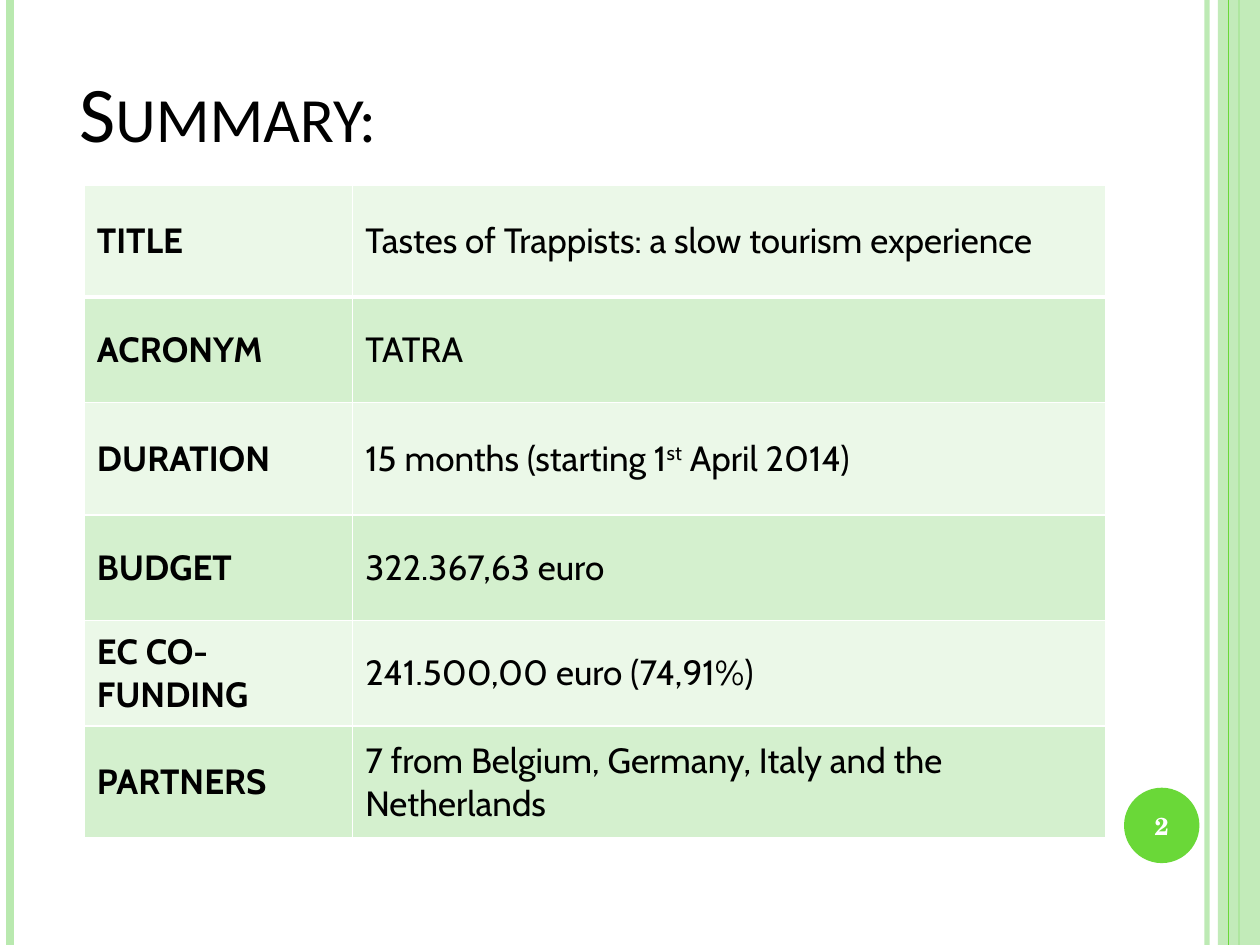
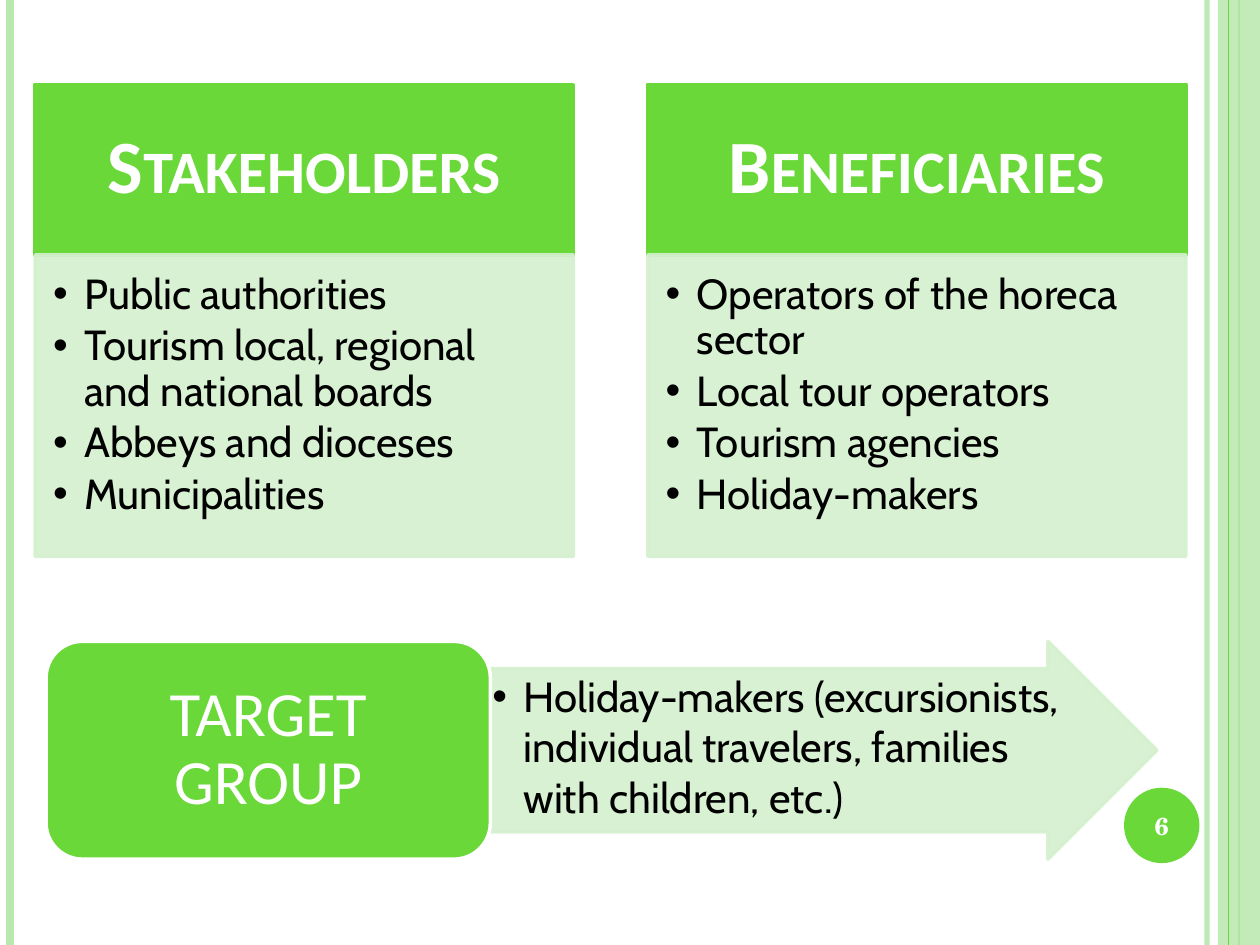
from dataclasses import dataclass

from lxml import etree
from pptx import Presentation
from pptx.dml.color import RGBColor
from pptx.enum.shapes import MSO_CONNECTOR, MSO_SHAPE
from pptx.enum.text import MSO_ANCHOR, PP_ALIGN
from pptx.oxml.ns import qn
from pptx.util import Cm, Pt

RECT, ELLIPSE = MSO_SHAPE.RECTANGLE, MSO_SHAPE.OVAL
ROUNDED, ARROW = MSO_SHAPE.ROUNDED_RECTANGLE, MSO_SHAPE.RIGHT_ARROW
STRAIGHT = MSO_CONNECTOR.STRAIGHT
TOP, MIDDLE, BOTTOM = MSO_ANCHOR.TOP, MSO_ANCHOR.MIDDLE, MSO_ANCHOR.BOTTOM
LEFT, CENTER = PP_ALIGN.LEFT, PP_ALIGN.CENTER


@dataclass(frozen=True)
class Theme:
    green: str = "6AD838"
    band: str = "B9E9AF"
    pale: str = "D4F0CE"
    paler: str = "EBF8E8"
    white: str = "FFFFFF"
    black: str = "000000"
    heading_font: str = "Calibri"
    body_font: str = "Cabin"
    number_font: str = "TeX Gyre Schola"
    title_size: float = 45
    header_size: float = 43
    target_size: float = 36
    list_size: float = 24
    table_size: float = 20
    number_size: float = 14


T = Theme()
WIDTH, HEIGHT = 25.4, 19.05
BODY = dict(font=T.body_font, size=T.list_size, color=T.black)
TITLE = dict(font=T.heading_font, size=T.title_size, color=T.black, cap="small")
HEADER = dict(font=T.heading_font, size=T.header_size, color=T.white, bold=True, cap="small")
TARGET = dict(font=T.heading_font, size=T.target_size, color=T.white)
NUMBER = dict(font=T.number_font, size=T.number_size, color=T.white, bold=True)
CELL = dict(font=T.body_font, size=T.table_size, color=T.black)

SUMMARY = [
    ("TITLE", ["Tastes of Trappists: a slow tourism experience"]),
    ("ACRONYM", ["TATRA"]),
    ("DURATION", ["15 months (starting 1", ("st", 30000), " April 2014)"]),
    ("BUDGET", ["322.367,63 euro"]),
    ("EC CO-FUNDING", ["241.500,00 euro (74,91%)"]),
    ("PARTNERS", ["7 from Belgium, Germany, Italy and the Netherlands"]),
]
GROUPS = [
    ("Stakeholders", ["Public authorities", "Tourism local, regional and national boards",
                      "Abbeys and dioceses", "Municipalities"]),
    ("Beneficiaries", ["Operators of the horeca sector", "Local tour operators",
                       "Tourism agencies", "Holiday-makers"]),
]
TARGET_TEXT = "Holiday-makers (excursionists, individual travelers, families with children, etc.)"


def rgb(color):
    return RGBColor.from_string(color)


def set_alpha(fill, percent):
    color = fill.fore_color._xFill.find(qn("a:srgbClr"))
    etree.SubElement(color, qn("a:alpha"), val=str(percent * 1000))


def paint(fill, color, alpha=100):
    fill.solid()
    fill.fore_color.rgb = rgb(color)
    if alpha < 100:
        set_alpha(fill, alpha)


def add_box(s, kind, box, fill, line=None, line_width=2, alpha=100):
    sp = s.shapes.add_shape(kind, *map(Cm, box))
    sp.shadow.inherit = False
    paint(sp.fill, fill, alpha)
    if line:
        paint(sp.line.fill, line, alpha)
        sp.line.width = Pt(line_width)
    else:
        sp.line.fill.background()
    return sp


def add_run(p, text, font, size, color, bold=False, cap=None, baseline=None):
    r = p.add_run()
    r.text = text
    for name, value in dict(name=font, size=Pt(size), bold=bold).items():
        setattr(r.font, name, value)
    r.font.color.rgb = rgb(color)
    for name, value in dict(cap=cap, baseline=baseline).items():
        if value:
            r.font._element.set(name, str(value))


def add_bullet(p):
    pPr = p._p.get_or_add_pPr()
    pPr.set("marL", str(Cm(0.63)))
    pPr.set("indent", str(-Cm(0.63)))
    etree.SubElement(pPr, qn("a:buFont"), typeface="Arial")
    etree.SubElement(pPr, qn("a:buChar"), char="•")


def write(sp, lines, style, anchor=MIDDLE, align=CENTER, margins=(0, 0, 0, 0),
          spacing=1, after=0, bullets=False):
    """Fill a shape with paragraphs; margins are left, top, right, bottom in cm."""
    tf = sp.text_frame
    tf.word_wrap = True
    tf.vertical_anchor = anchor
    for side, margin in zip(("left", "top", "right", "bottom"), margins):
        setattr(tf, f"margin_{side}", Cm(margin))
    for i, line in enumerate(lines):
        p = tf.add_paragraph() if i else tf.paragraphs[0]
        for name, value in dict(alignment=align, line_spacing=spacing,
                                space_after=Pt(after)).items():
            setattr(p, name, value)
        if bullets:
            add_bullet(p)
        add_run(p, line, **style)


def add_vertical_line(s, x, color, width, alpha=100):
    line = s.shapes.add_connector(STRAIGHT, Cm(x), 0, Cm(x), Cm(HEIGHT))
    paint(line.line.fill, color, alpha)
    line.line.width = Pt(width)
    etree.SubElement(line._element.spPr, qn("a:effectLst"))


def add_frame(s, number):
    """Side bands and the page number disc shared by all slides."""
    add_vertical_line(s, 24.33, T.band, 3, 93)
    add_vertical_line(s, 0.21, T.band, 4.5)
    add_vertical_line(s, 24.98, T.green, 1.5)
    add_box(s, RECT, (24.55, 0, WIDTH - 24.55, HEIGHT), T.band, alpha=87)
    add_vertical_line(s, 24.77, T.green, 0.75)
    disc = add_box(s, ELLIPSE, (22.66, 15.88, 1.52, 1.52), T.green)
    write(disc, [str(number)], NUMBER)


def add_title(s, text, box):
    sp = s.shapes.add_textbox(*map(Cm, box))
    write(sp, [text], TITLE, BOTTOM, LEFT, (0.25, 0.13, 0.25, 0.13))


def add_borders(cell, bottom=1):
    tcPr = cell._tc.get_or_add_tcPr()
    for side, width in dict(L=1, R=1, T=1, B=bottom).items():
        ln = etree.SubElement(tcPr, qn(f"a:ln{side}"), w=str(Pt(width)))
        fill = etree.SubElement(ln, qn("a:solidFill"))
        etree.SubElement(fill, qn("a:srgbClr"), val=T.white)


def add_summary_table(s, left, top, column_widths, row_heights):
    table = s.shapes.add_table(len(SUMMARY), len(column_widths), Cm(left), Cm(top),
                               Cm(sum(column_widths)), Cm(sum(row_heights))).table
    table.first_row = table.horz_banding = False
    for column, width in zip(table.columns, column_widths):
        column.width = Cm(width)
    for i, (label, parts) in enumerate(SUMMARY):
        table.rows[i].height = Cm(row_heights[i])
        for j, content in enumerate(([label], parts)):
            cell = table.cell(i, j)
            cell.vertical_anchor = MIDDLE
            add_borders(cell, bottom=1 if i else 3)
            paint(cell.fill, T.pale if i % 2 else T.paler)
            for part in content:
                text, baseline = part if isinstance(part, tuple) else (part, None)
                add_run(cell.text_frame.paragraphs[0], text, **CELL,
                        bold=j == 0, baseline=baseline)


def add_group_panel(s, heading, items, box):
    left, top, width, height = box
    header_height = 3.44
    header = add_box(s, RECT, (left, top, width, header_height), T.green, T.green)
    write(header, [heading], HEADER, margins=(0.84, 0.48, 0.84, 0.48), spacing=0.9)
    body = add_box(s, RECT, (left, top + header_height, width, height - header_height),
                   T.pale, T.pale, alpha=90)
    write(body, items, BODY, TOP, LEFT, (0.36, 0.36, 0.48, 0.53),
          spacing=0.9, after=3.6, bullets=True)


def add_target_group(s, box):
    left, top, width, height = box
    label_width = 0.4 * width
    arrow = add_box(s, ARROW, (left + label_width, top, width - label_width, height),
                    T.pale, T.pale, alpha=90)
    arrow.adjustments[0] = 0.75
    write(arrow, [TARGET_TEXT], BODY, TOP, LEFT, (0.04,) * 4, bullets=True)
    label = add_box(s, ROUNDED, (left, top, label_width, height), T.green, T.white)
    write(label, ["TARGET GROUP"], TARGET, margins=(0.38, 0.19, 0.38, 0.19), spacing=0.9)


def build_summary_slide(s):
    add_frame(s, 2)
    add_title(s, "Summary:", (1.35, 0.15, 20.75, 3.18))
    add_summary_table(s, 1.7, 3.73, (5.41, 15.19), (2.26, 2.13, 2.26, 2.13, 2.13, 2.26))


def build_groups_slide(s):
    add_frame(s, 6)
    for i, (heading, items) in enumerate(GROUPS):
        add_group_panel(s, heading, items, (0.71 + i * 12.35, 1.7, 10.85, 9.52))
    add_target_group(s, (0.93, 12.93, 22.39, 4.39))


def main():
    prs = Presentation()
    prs.slide_width, prs.slide_height = Cm(WIDTH), Cm(HEIGHT)
    for build in (build_summary_slide, build_groups_slide):
        build(prs.slides.add_slide(prs.slide_layouts[6]))
    prs.save("out.pptx")


if __name__ == "__main__":
    main()
